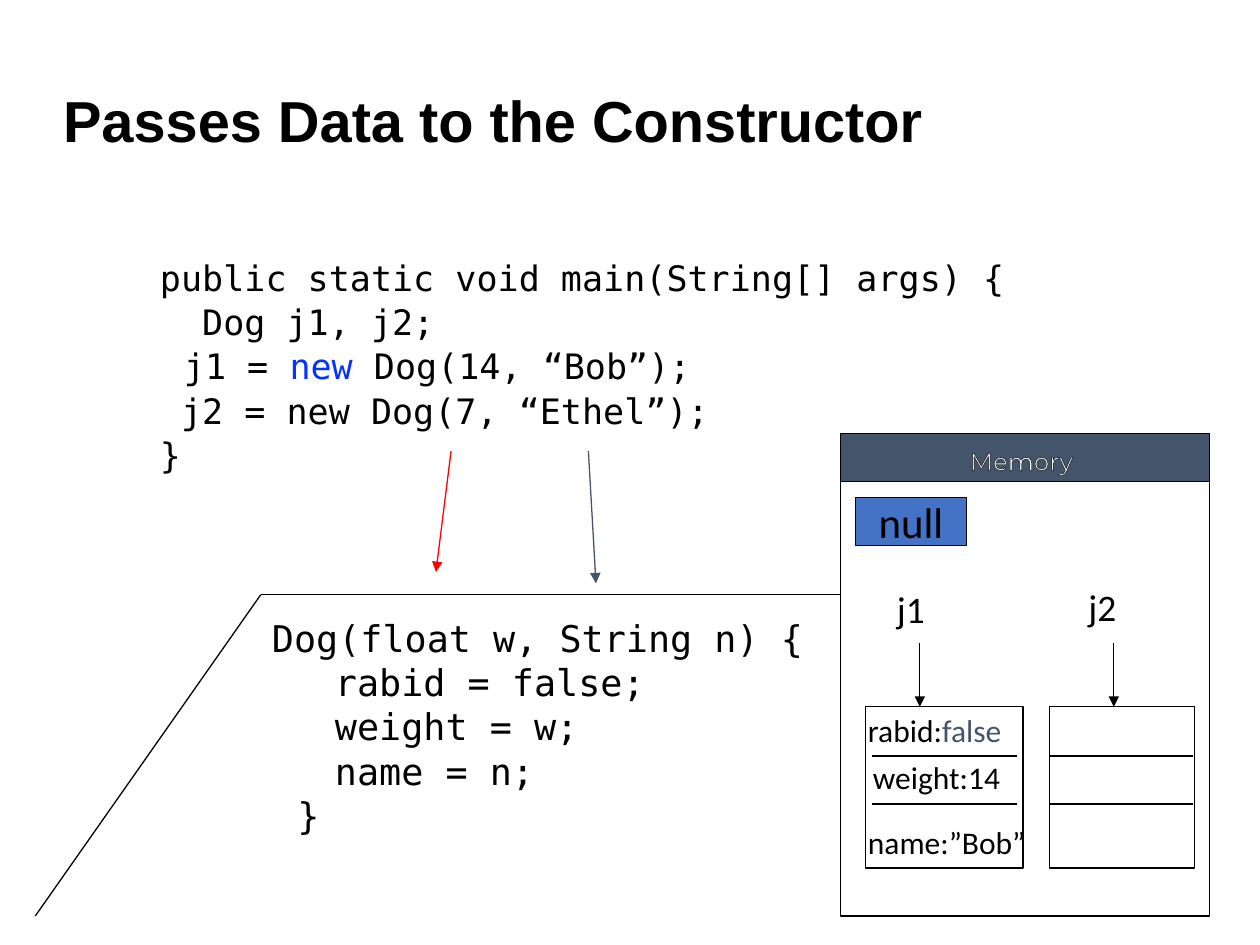
from lxml.etree import SubElement
from pptx import Presentation
from pptx.dml.color import RGBColor
from pptx.enum.shapes import MSO_CONNECTOR, MSO_SHAPE
from pptx.enum.text import MSO_ANCHOR, MSO_AUTO_SIZE, PP_ALIGN
from pptx.oxml import parse_xml
from pptx.oxml.ns import nsdecls, qn
from pptx.util import Inches, Pt

BLACK, SLATE, BLUE = "000000", "44546A", "4472C4"
MONO = "DejaVu Sans Mono"


def color(hex_string):
    return RGBColor.from_string(hex_string)


def write(paragraph, text, size=18, font="Calibri", fill=BLACK, bold=False,
          align=PP_ALIGN.LEFT, spacing=1, before=0):
    paragraph.alignment = align
    paragraph.line_spacing = spacing
    paragraph.space_before = Pt(before)
    run = paragraph.add_run()
    run.text = text
    run.font.size = Pt(size)
    run.font.name = font
    run.font.bold = bold
    run.font.color.rgb = color(fill)
    return run


prs = Presentation()
prs.slide_width, prs.slide_height = Inches(10), Inches(7.5)
slide = prs.slides.add_slide(prs.slide_layouts[1])
shapes = slide.shapes

# Title
title = shapes.title
title.left, title.top = Inches(0.4), Inches(0.56)
title.width, title.height = Inches(9.21), Inches(0.84)
title.text_frame.vertical_anchor = MSO_ANCHOR.MIDDLE
title.text_frame.auto_size = MSO_AUTO_SIZE.NONE
write(title.text_frame.paragraphs[0], "Passes Data to the Constructor",
      size=33, font="Arial", bold=True, spacing=0.9)

# Main method; each line is a list of (text, colour)
main_code = slide.placeholders[1]
main_code.left, main_code.top = Inches(0.9), Inches(2.02)
main_code.width, main_code.height = Inches(7.79), Inches(4.4)
main_frame = main_code.text_frame
main_frame.auto_size = MSO_AUTO_SIZE.NONE
main_frame.margin_left = main_frame.margin_right = 0
main_lines = [
    [("public static void main(String[] args) {", BLACK)],
    [("  Dog j1, j2;", BLACK)],
    [("\tj1 = ", BLACK), ("new", "0432FF"), (" Dog(14, “Bob”);", BLACK)],
    [(" j2 = new Dog(7, “Ethel”);", BLACK)],
    [("}", BLACK)],
]
for index, line in enumerate(main_lines):
    paragraph = main_frame.add_paragraph() if index else main_frame.paragraphs[0]
    properties = paragraph._p.get_or_add_pPr()
    properties.set("marL", str(Inches(0.56)))
    properties.set("indent", str(Inches(-0.19)))
    SubElement(properties, qn("a:buNone"))
    for text, fill in line:
        write(paragraph, text, size=20, font=MONO, fill=fill, spacing=0.9,
              before=3.8 if index else 0)

# Constructor
constructor = shapes.add_textbox(Inches(1.56), Inches(4.84), Inches(5.17), Inches(2.36))
constructor_frame = constructor.text_frame
constructor_frame.word_wrap = True
constructor_lines = ["\tDog(float w, String n) {", "\t\trabid = false;",
                     "\t\tweight = w;", "\t\tname = n;", "    }"]
for index, text in enumerate(constructor_lines):
    paragraph = constructor_frame.add_paragraph() if index else constructor_frame.paragraphs[0]
    write(paragraph, text, size=21, font=MONO)

# Memory panel, its header, the null cell and the two objects
boxes = [
    (6.67, 3.44, 2.93, 3.83, None, ""),
    (6.67, 3.44, 2.93, 0.38, SLATE, ""),
    (6.79, 3.95, 0.88, 0.38, BLUE, "null"),
    (6.87, 5.61, 1.25, 1.28, None, ""),
    (8.33, 5.61, 1.15, 1.28, None, ""),
]
for left, top, width, height, fill, text in boxes:
    box = shapes.add_shape(MSO_SHAPE.RECTANGLE, Inches(left), Inches(top),
                           Inches(width), Inches(height))
    box.shadow.inherit = False
    box.line.color.rgb = color(BLACK)
    box.line.width = Pt(0.75)
    if fill:
        box.fill.solid()
        box.fill.fore_color.rgb = color(fill)
    else:
        box.fill.background()
    if text:
        write(box.text_frame.paragraphs[0], text, size=24.5, align=PP_ALIGN.CENTER)

# Outlined header text
header = shapes.add_textbox(Inches(6.92), Inches(3.49), Inches(2.37), Inches(0.34))
header.text_frame.word_wrap = True
header_run = write(header.text_frame.paragraphs[0], "Memory", size=14,
                   font="Montserrat", fill="FFFFFF", align=PP_ALIGN.CENTER)
header_run.font._element.insert(0, parse_xml(
    f'<a:ln {nsdecls("a")} w="{Pt(0.75)}"><a:solidFill>'
    f'<a:srgbClr val="{BLACK}"/></a:solidFill></a:ln>'))

# Variable names and field values
labels = [
    (7.02, 4.6, 0.44, 0.46, 21.4, [("j1", BLACK)]),
    (8.54, 4.59, 0.44, 0.46, 21.4, [("j2", BLACK)]),
    (6.79, 5.59, 1.37, 0.4, 18, [("rabid:", BLACK), ("false", SLATE)]),
    (6.83, 5.97, 1.28, 0.4, 18, [("weight:14", BLACK)]),
    (6.79, 6.48, 1.52, 0.4, 18, [("name:”Bob”", BLACK)]),
]
for left, top, width, height, size, parts in labels:
    label = shapes.add_textbox(Inches(left), Inches(top), Inches(width), Inches(height))
    label.text_frame.word_wrap = True
    for text, fill in parts:
        write(label.text_frame.paragraphs[0], text, size=size, fill=fill)

# Field dividers, constructor outline, references and passed arguments
lines = [(left, y, right, y, BLACK, False)
         for left, right in ((6.92, 8.07), (8.33, 9.47)) for y in (6, 6.38)]
lines += [
    (0.28, 7.27, 2.07, 4.72, BLACK, False),
    (2.07, 4.72, 6.67, 4.72, BLACK, False),
    (7.3, 5.1, 7.3, 5.61, BLACK, True),
    (8.84, 5.1, 8.84, 5.61, BLACK, True),
    (3.58, 3.58, 3.46, 4.54, "FF0000", True),
    (4.67, 3.58, 4.73, 4.63, SLATE, True),
]
for x1, y1, x2, y2, stroke, has_arrow in lines:
    connector = shapes.add_connector(MSO_CONNECTOR.STRAIGHT, Inches(x1), Inches(y1),
                                     Inches(x2), Inches(y2))
    connector.line.color.rgb = color(stroke)
    connector.line.width = Pt(0.75)
    if has_arrow:
        SubElement(connector.line._get_or_add_ln(), qn("a:tailEnd"), type="triangle")
    SubElement(connector._element.spPr, qn("a:effectLst"))

prs.save("out.pptx")
